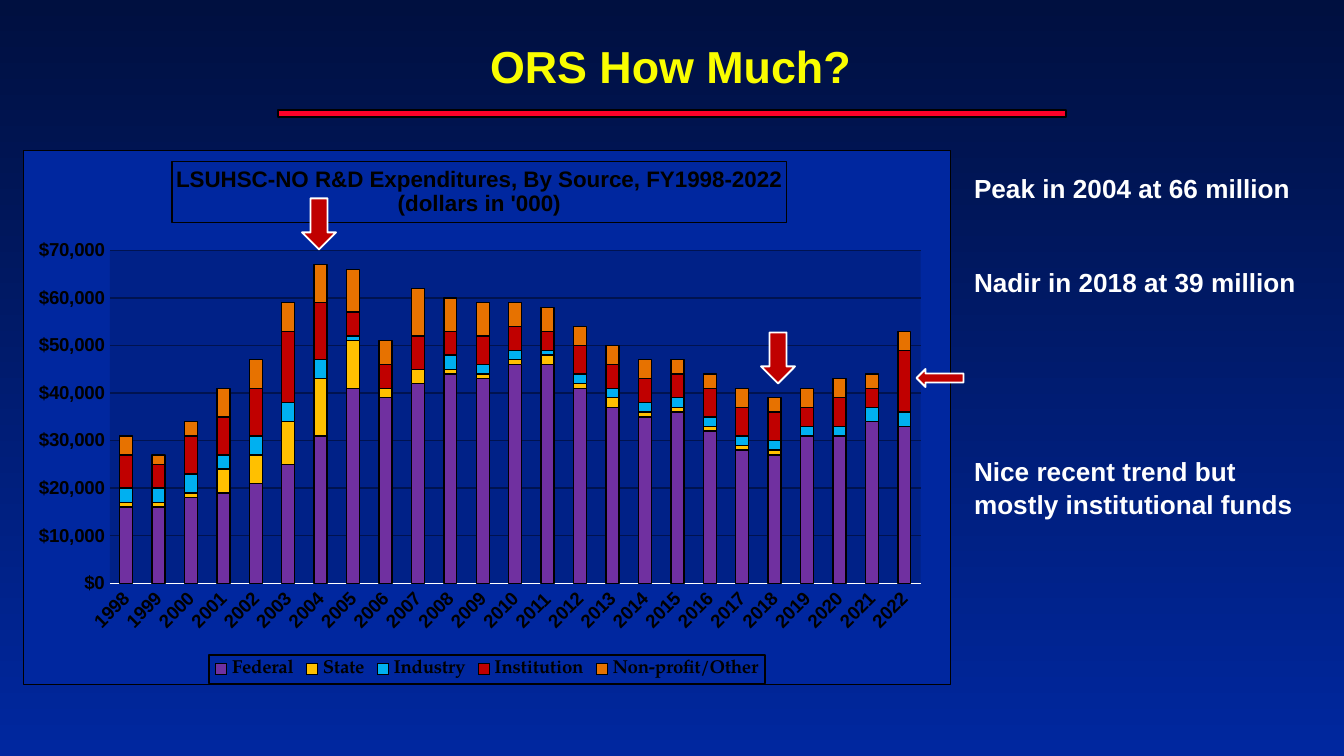
import dataclasses

import pptx
import pptx.chart.data
import pptx.dml.color
import pptx.enum.chart
import pptx.enum.shapes
import pptx.enum.text
import pptx.oxml
import pptx.oxml.ns
import pptx.util

SCALE = 914400 / 134.4
SHAPE = pptx.enum.shapes.MSO_SHAPE
ALIGN = pptx.enum.text.PP_ALIGN
CHART = pptx.enum.chart


@dataclasses.dataclass(frozen=True)
class Theme:
    top: str = "001040"
    blue: str = "00279F"
    plot: str = "002187"
    grid: str = "001350"
    yellow: str = "FAFD00"
    red: str = "FC0128"
    arrow: str = "C00000"
    white: str = "FFFFFF"
    black: str = "000000"
    sans: str = "Arial"
    serif: str = "TeX Gyre Pagella"
    head: int = 24
    note: int = 14
    title: int = 12
    label: int = 10


@dataclasses.dataclass(frozen=True)
class Arrow:
    x: int  # centre
    y: int
    length: int
    width: int
    turn: int


@dataclasses.dataclass(frozen=True)
class Source:
    name: str
    color: str
    vals: tuple[int, ...]  # millions of dollars, one for each year


@dataclasses.dataclass(frozen=True)
class Note:
    text: str
    gap: int  # points before


THEME = Theme()
YEARS = range(1998, 2023)
SOURCES = (
    Source("Federal", "7030A0", (16, 16, 18, 19, 21, 25, 31, 41, 39, 42, 44, 43, 46,
                                 46, 41, 37, 35, 36, 32, 28, 27, 31, 31, 34, 33)),
    Source("State", "FFC000", (1, 1, 1, 5, 6, 9, 12, 10, 2, 3, 1, 1, 1,
                               2, 1, 2, 1, 1, 1, 1, 1, 0, 0, 0, 0)),
    Source("Industry", "00B0F0", (3, 3, 4, 3, 4, 4, 4, 1, 0, 0, 3, 2, 2,
                                  1, 2, 2, 2, 2, 2, 2, 2, 2, 2, 3, 3)),
    Source("Institution", "C00000", (7, 5, 8, 8, 10, 15, 12, 5, 5, 7, 5, 6, 5,
                                     4, 6, 5, 5, 5, 6, 6, 6, 4, 6, 4, 13)),
    Source("Non-profit/Other", "E77200", (4, 2, 3, 6, 6, 6, 8, 9, 5, 10, 7, 7, 5,
                                          5, 4, 4, 4, 3, 3, 4, 3, 4, 4, 3, 4)),
)
NOTES = (
    Note("Peak in 2004 at 66 million", 0),
    Note("Nadir in 2018 at 39 million", 34),
    Note("Nice recent trend but", 84),
    Note("mostly institutional funds", 1),
)
ARROWS = (
    Arrow(319, 224, 51, 34, 90),
    Arrow(778, 358, 51, 34, 90),
    Arrow(940, 378, 47, 18, 180),
)


def px(n: float) -> int:
    return round(n * SCALE)


def rgb(color: str) -> pptx.dml.color.RGBColor:
    return pptx.dml.color.RGBColor.from_string(color)


def style(font, size: int, color: str, face: str = THEME.sans, bold: bool = True) -> None:
    font.size, font.name, font.bold = pptx.util.Pt(size), face, bold
    font.color.rgb = rgb(color)


def write(frame, text: str, *, size: int, color: str, align=ALIGN.LEFT, gap: int = 0) -> None:
    """Add one paragraph, filling the first while it is empty."""
    para = frame.paragraphs[0]
    if para.runs:
        para = frame.add_paragraph()
    run = para.add_run()
    run.text = text
    para.alignment = align
    para.space_before = pptx.util.Pt(gap)
    style(run.font, size, color)


def frame(slide, x: int, y: int, w: int, h: int):
    body = slide.shapes.add_textbox(px(x), px(y), px(w), px(h)).text_frame
    body.word_wrap = False
    body.margin_left = body.margin_right = px(11)
    body.margin_top = body.margin_bottom = px(5)
    return body


def paint(item, fill: str, line: str, width: float) -> None:
    item.fill.solid()
    item.fill.fore_color.rgb = rgb(fill)
    item.line.color.rgb = rgb(line)
    item.line.width = pptx.util.Pt(width)


def shape(slide, kind, x: float, y: float, w: int, h: int, fill: str, line: str):
    item = slide.shapes.add_shape(kind, px(x), px(y), px(w), px(h))
    item.shadow.inherit = False
    paint(item, fill, line, 1)
    return item


def box(part, fill: str = "", line: str = "") -> None:
    """Give a chart part a fill and a border."""
    def solid(color: str) -> str:
        return (f'<a:solidFill><a:srgbClr val="{color}"/></a:solidFill>'
                if color else "<a:noFill/>")

    node = pptx.oxml.parse_xml(
        f'<c:spPr {pptx.oxml.ns.nsdecls("c", "a")}>{solid(fill)}'
        f'<a:ln w="9525">{solid(line)}</a:ln></c:spPr>')
    text = part.find(pptx.oxml.ns.qn("c:txPr"))
    if text is None:
        part.append(node)
    else:
        text.addprevious(node)


def place(part, index: int, inner: bool = False, **spots: float) -> None:
    """Fix a chart part at fractions of the chart area."""
    for old in part.findall(pptx.oxml.ns.qn("c:layout")):
        part.remove(old)
    tags = '<c:layoutTarget val="inner"/>' if inner else ""
    tags += "".join(f'<c:{key}Mode val="edge"/>' for key in ("x", "y"))
    tags += "".join(f'<c:{key} val="{val}"/>' for key, val in spots.items())
    part.insert(index, pptx.oxml.parse_xml(
        f'<c:layout {pptx.oxml.ns.nsdecls("c")}>'
        f'<c:manualLayout>{tags}</c:manualLayout></c:layout>'))


def graph(slide) -> None:
    data = pptx.chart.data.CategoryChartData(number_format='"$"#,##0')
    data.categories = [str(year) for year in YEARS]
    for src in SOURCES:
        data.add_series(src.name, [val * 1000 for val in src.vals])
    chart = slide.shapes.add_chart(CHART.XL_CHART_TYPE.COLUMN_STACKED, px(23), px(150),
                                   px(928), px(535), data).chart
    style(chart.font, THEME.label, THEME.white, THEME.serif, False)

    # Columns
    plot = chart.plots[0]
    plot.gap_width, plot.overlap, plot.vary_by_categories = 150, 100, False
    for src, series in zip(SOURCES, plot.series):
        paint(series.format, src.color, THEME.black, 0.75)

    # Axes
    cat, val = chart.category_axis, chart.value_axis
    for axis in (cat, val):
        axis.major_tick_mark = axis.minor_tick_mark = CHART.XL_TICK_MARK.NONE
        style(axis.tick_labels.font, THEME.label, THEME.black)
    cat.format.line.color.rgb = rgb(THEME.white)
    cat.format.line.width = pptx.util.Pt(0.75)
    turn = cat.tick_labels.font._element.getparent().getparent().getparent()
    turn.find(pptx.oxml.ns.qn("a:bodyPr")).set("rot", "-2700000")
    val.minimum_scale, val.maximum_scale, val.major_unit = 0, 70000, 10000
    val.tick_labels.number_format = '"$"#,##0'
    val.tick_labels.number_format_is_linked = False
    val.format.line.fill.background()
    grid = val.major_gridlines.format.line
    grid.color.rgb, grid.width = rgb(THEME.grid), pptx.util.Pt(0.75)

    # Title and legend
    for line in ("LSUHSC-NO R&D Expenditures, By Source, FY1998-2022", "(dollars in '000)"):
        write(chart.chart_title.text_frame, line, size=THEME.title, color=THEME.black,
              align=ALIGN.CENTER)
    chart.has_legend = True
    chart.legend.position = CHART.XL_LEGEND_POSITION.BOTTOM
    chart.legend.include_in_layout = False
    style(chart.legend.font, THEME.label, THEME.black, THEME.serif)

    # Boxes and places
    root = chart._chartSpace
    area = root.chart.plotArea
    title, key = chart.chart_title._element, chart.legend._element
    box(root, THEME.blue, THEME.black)
    box(area, THEME.plot)
    box(title, line=THEME.black)
    box(key, line=THEME.black)
    place(area, 0, inner=True, x=0.093, y=0.187, w=0.875, h=0.624)
    place(title, 1, x=0.16, y=0.02)
    place(key, 1, x=0.2, y=0.945, w=0.6, h=0.054)


def main() -> None:
    deck = pptx.Presentation()
    deck.slide_width, deck.slide_height = px(1344), px(756)
    slide = deck.slides.add_slide(deck.slide_layouts[6])

    # Background
    back = slide.background.fill
    back.gradient()
    back.gradient_angle = 270
    for stop, color, spot in zip(back.gradient_stops, (THEME.top, THEME.blue), (0, 1)):
        stop.color.rgb, stop.position = rgb(color), spot

    # Heading and rule
    write(frame(slide, 478, 34, 385, 65), "ORS How Much?", size=THEME.head,
          color=THEME.yellow, align=ALIGN.CENTER)
    shape(slide, SHAPE.RECTANGLE, 278, 110, 788, 7, THEME.red, THEME.black)

    # Notes
    body = frame(slide, 963, 167, 351, 396)
    for note in NOTES:
        write(body, note.text, size=THEME.note, color=THEME.white, gap=note.gap)

    # Chart and its arrows
    graph(slide)
    for arr in ARROWS:
        item = shape(slide, SHAPE.RIGHT_ARROW, arr.x - arr.length / 2, arr.y - arr.width / 2,
                     arr.length, arr.width, THEME.arrow, THEME.white)
        item.rotation = arr.turn

    deck.save("out.pptx")


if __name__ == "__main__":
    main()
